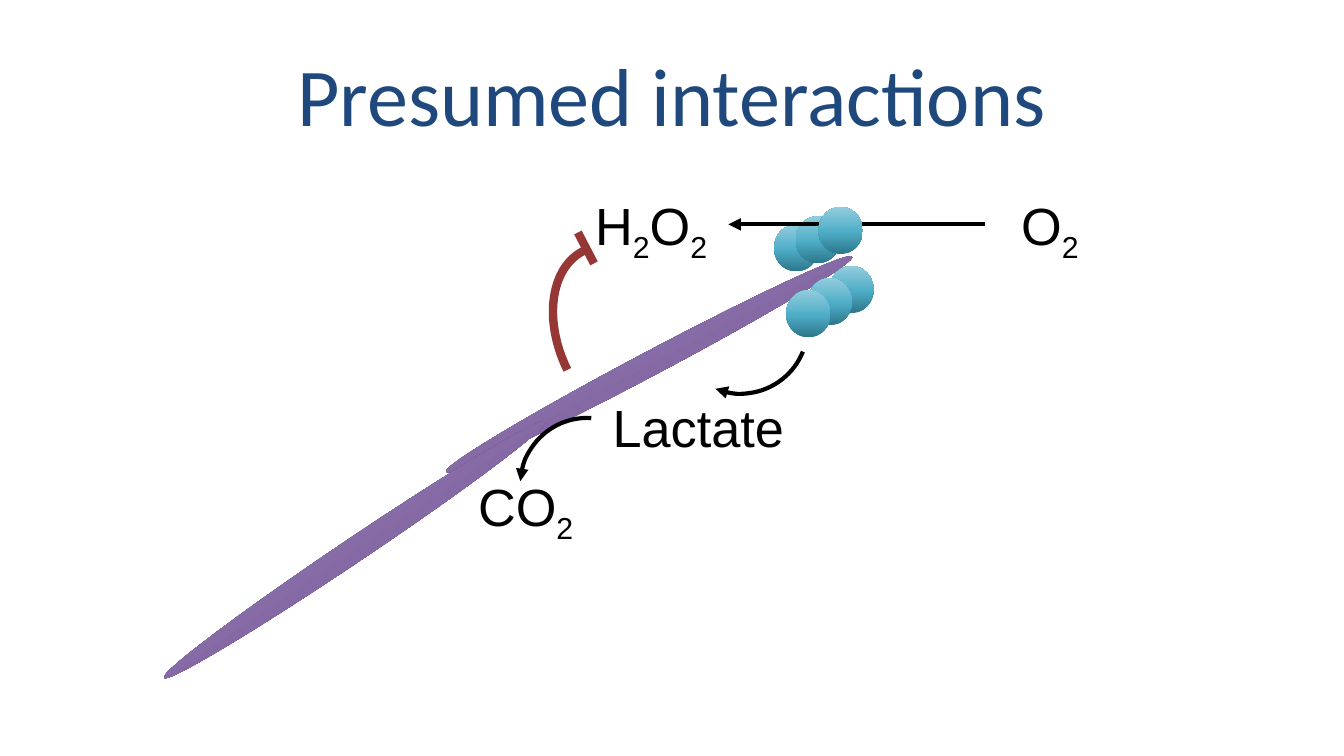
from lxml import etree
from pptx import Presentation
from pptx.dml.color import RGBColor
from pptx.enum import shapes as kinds, text as styles
from pptx.oxml import ns
from pptx.util import Inches, Pt

COLORS = {"title": "1F497D", "ink": "000000", "inhibit": "953735"}
ROD_STOPS = {0: "56426E", 48: "8469A5", 100: "B3A2C7"}
BEAD_STOPS = {0: "2C778B", 48: "50AEC8", 100: "93CDDD"}


def color(name):
    return RGBColor.from_string(COLORS[name])


def add_node(parent, tag, **attributes):
    return etree.SubElement(parent, ns.qn(tag), attributes)


def add_ellipse(page, left, top, width, height, stops, rotation=0):
    """Add an ellipse shaded from the first stop at the bottom upwards."""
    ellipse = page.shapes.add_shape(kinds.MSO_SHAPE.OVAL, Inches(left), Inches(top),
                                    Inches(width), Inches(height))
    ellipse.shadow.inherit = False
    ellipse.line.fill.background()
    ellipse.rotation = rotation
    ellipse.fill.gradient()
    gradient = ellipse._element.spPr.find(ns.qn("a:gradFill"))
    for child in list(gradient):
        gradient.remove(child)
    stop_list = add_node(gradient, "a:gsLst")
    for position, value in stops.items():
        stop = add_node(stop_list, "a:gs", pos=str(position * 1000))
        add_node(stop, "a:srgbClr", val=value)
    add_node(gradient, "a:lin", ang=str(270 * 60000), scaled="0")


def style_line(shape, name, width, arrow):
    shape.line.color.rgb = color(name)
    shape.line.width = Pt(width)
    if arrow:
        add_node(shape.line._get_or_add_ln(), "a:tailEnd", type="triangle")


def add_arc(shapes, left, top, width, height, rotation, name="ink", weight=2.25,
            arrow=True, flip=False):
    arc = shapes.add_shape(kinds.MSO_SHAPE.ARC, Inches(left), Inches(top),
                           Inches(width), Inches(height))
    arc.shadow.inherit = False
    arc.fill.background()
    arc.rotation = rotation
    if flip:
        arc._element.spPr.find(ns.qn("a:xfrm")).set("flipV", "1")
    style_line(arc, name, weight, arrow)


def add_line(shapes, start, end, name="ink", weight=2.25, arrow=True):
    line = shapes.add_connector(kinds.MSO_CONNECTOR.STRAIGHT,
                                *(Inches(value) for value in (*start, *end)))
    style_line(line, name, weight, arrow)
    add_node(line._element.spPr, "a:effectLst")


def add_title(page, left, top, width, height, words):
    box = page.shapes.add_textbox(Inches(left), Inches(top), Inches(width), Inches(height))
    frame = box.text_frame
    frame.word_wrap = True
    frame.vertical_anchor = styles.MSO_ANCHOR.MIDDLE
    frame.text = words
    para = frame.paragraphs[0]
    para.alignment = styles.PP_ALIGN.CENTER
    font = para.runs[0].font
    font.name, font.size, font.color.rgb = "Calibri", Pt(44), color("title")


def add_label(page, left, top, width, *parts):
    """Add a chemical name; parts that are digits become subscripts."""
    box = page.shapes.add_textbox(Inches(left), Inches(top), Inches(width), Inches(0.57))
    frame = box.text_frame
    frame.word_wrap = False
    frame.auto_size = styles.MSO_AUTO_SIZE.SHAPE_TO_FIT_TEXT
    for part in parts:
        span = frame.paragraphs[0].add_run()
        span.text = part
        span.font.name, span.font.size = "Arial", Pt(28)
        span.font.color.rgb = color("ink")
        if part.isdigit():
            span.font._element.set("baseline", "-25000")


def add_beads(page, left, top, step_x=0, step_y=0, count=1):
    for index in range(count):
        add_ellipse(page, left + index * step_x, top + index * step_y, 0.33, 0.35, BEAD_STOPS)


def add_inhibitor(page, left, top):
    """Add the blunt-ended arc, grouped with its bar."""
    group = page.shapes.add_group_shape()
    add_arc(group.shapes, left, top + 0.3, 1.48, 1, 243.7, "inhibit", 4.5, arrow=False)
    add_line(group.shapes, (left + 0.37, top), (left + 0.49, top + 0.23),
             "inhibit", 4.5, arrow=False)


def add_cells(page, left, top):
    """Add two rods, two rows of beads and the oxygen arrow running between them."""
    for x, y, rotation in ((2.19, 1.08, 332.1), (0, 2.46, 326.1)):
        add_ellipse(page, left + x, top + y, 3.42, 0.18, ROD_STOPS, rotation)
    add_beads(page, left + 4.83, top + 0.13, 0.16, -0.06, 2)
    add_line(page.shapes, (left + 6.4, top + 0.13), (left + 4.49, top + 0.13))
    add_beads(page, left + 5.16, top)
    add_beads(page, left + 5.24, top + 0.44, -0.16, 0.09, 3)


def add_reactions(page, left, top):
    """Add the chemical labels with their curved arrows."""
    add_label(page, left + 4.04, top, 0.65, "O", "2")
    add_label(page, left + 0.87, top, 1.08, "H", "2", "O", "2")
    add_inhibitor(page, left + 0.47, top + 0.34)
    add_arc(page.shapes, left + 1.55, top + 0.54, 1, 1, 112)
    add_label(page, left + 1, top + 1.5, 1.49, "Lactate")
    add_arc(page.shapes, left + 0.41, top + 1.72, 1, 1, 183.3, flip=True)
    add_label(page, left, top + 2.09, 0.94, "CO", "2")


def main():
    deck = Presentation()
    deck.slide_width = Inches(10)
    deck.slide_height = deck.slide_width * 9 // 16
    page = deck.slides.add_slide(deck.slide_layouts[6])
    add_title(page, 0.5, 0.23, 9, 0.94, "Presumed interactions")
    add_cells(page, 0.93, 1.54)
    add_reactions(page, 3.46, 1.39)
    deck.save("out.pptx")


if __name__ == "__main__":
    main()
